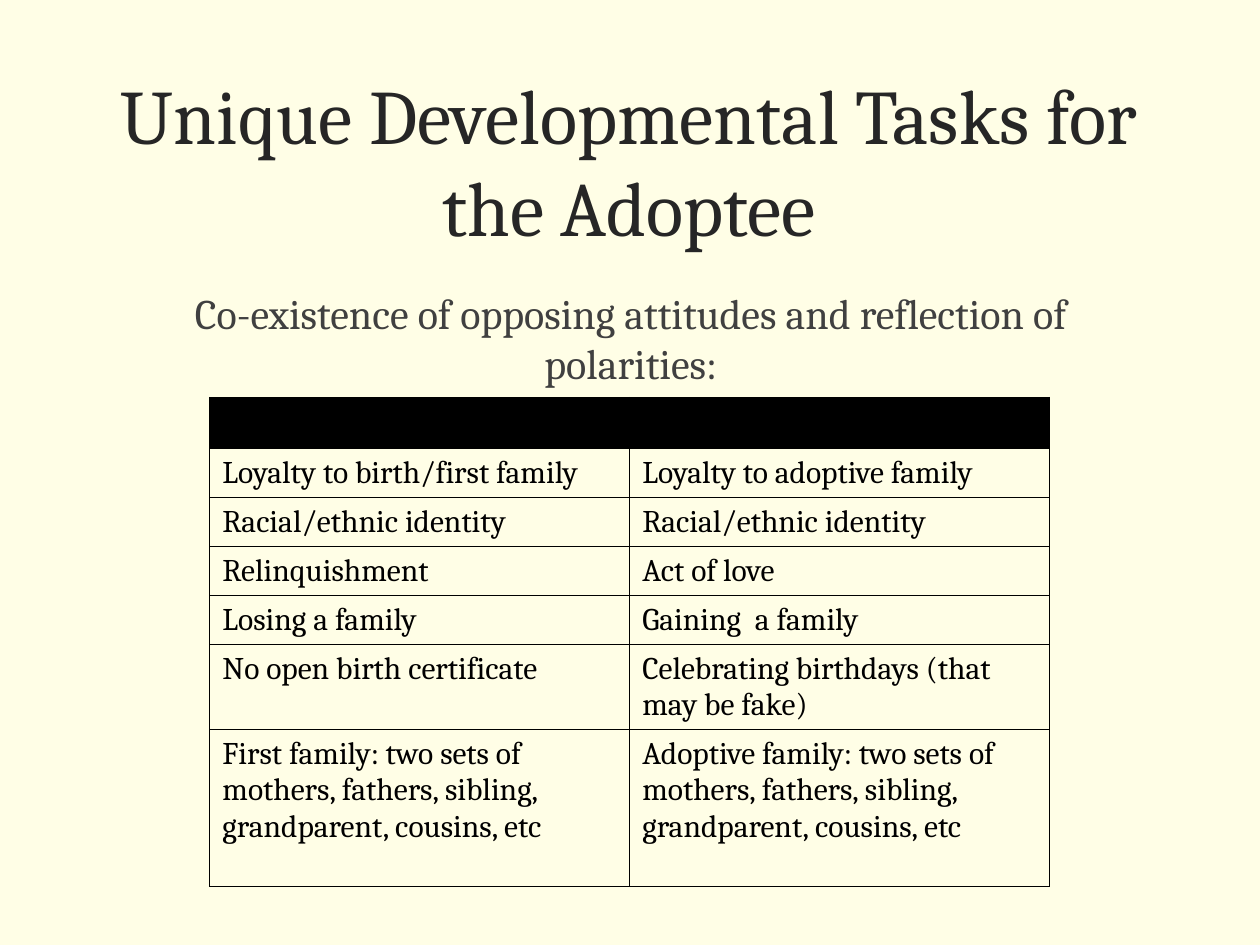
from dataclasses import dataclass

from lxml.etree import SubElement
from pptx import Presentation
from pptx.dml.color import RGBColor
from pptx.enum.text import MSO_ANCHOR, MSO_AUTO_SIZE, PP_ALIGN
from pptx.oxml.ns import qn
from pptx.util import Cm, Pt


@dataclass(frozen=True)
class Theme:
    """Colours, font and sizes of the deck."""
    font: str = "Cambria"
    background: str = "FFFEE6"
    title_color: str = "262626"
    body_color: str = "404040"
    table_color: str = "000000"
    title_size: int = 44
    body_size: int = 24
    table_size: int = 18
    outer_line: float = 0.75
    middle_line: float = 1


@dataclass(frozen=True)
class Box:
    """Place of a region, in centimetres."""
    left: float
    top: float
    width: float
    height: float


THEME = Theme()
TITLE = "Unique Developmental Tasks for the Adoptee"
LEAD = "Co-existence of opposing attitudes and reflection of polarities:"
POLARITIES = [
    ("", ""),
    ("Loyalty to birth/first family", "Loyalty to adoptive family"),
    ("Racial/ethnic identity", "Racial/ethnic identity"),
    ("Relinquishment", "Act of love"),
    ("Losing a family", "Gaining  a family"),
    ("No open birth certificate", "Celebrating birthdays (that may be fake)"),
    ("First family: two sets of mothers, fathers, sibling, grandparent, cousins, etc",
     "Adoptive family: two sets of mothers, fathers, sibling, grandparent, cousins, etc"),
]
ROW_HEIGHTS = [0.98] * 5 + [1.71, 3.15]


def add_span(para, text, size, color):
    """Add one styled run to a paragraph."""
    span = para.add_run()
    span.text = text
    span.font.name = THEME.font
    span.font.size = Pt(size)
    span.font.color.rgb = RGBColor.from_string(color)


def fill_placeholder(holder, box, text, size, color, anchor):
    """Place a placeholder and give it one centred, unbulleted paragraph."""
    holder.left, holder.top = Cm(box.left), Cm(box.top)
    holder.width, holder.height = Cm(box.width), Cm(box.height)
    frame = holder.text_frame
    frame.word_wrap = True
    frame.auto_size = MSO_AUTO_SIZE.NONE
    frame.vertical_anchor = anchor
    para = frame.paragraphs[0]
    para.alignment = PP_ALIGN.CENTER
    para.space_before = Pt(0)
    properties = para._p.get_or_add_pPr()
    properties.set("marL", "0")
    properties.set("indent", "0")
    SubElement(properties, qn("a:buNone"))
    add_span(para, text, size, color)


def set_borders(cell, widths):
    """Draw the left, right, top and bottom borders of a cell."""
    properties = cell._tc.get_or_add_tcPr()
    for side, width in zip("LRTB", widths):
        line = SubElement(properties, qn(f"a:ln{side}"), w=str(Pt(width)))
        fill = SubElement(line, qn("a:solidFill"))
        SubElement(fill, qn("a:srgbClr"), val=THEME.table_color)


def add_polarity_table(page, box):
    """Add the two-column table with its solid header row."""
    table = page.shapes.add_table(
        len(POLARITIES), 2, Cm(box.left), Cm(box.top), Cm(box.width), Cm(box.height)
    ).table
    table.horz_banding = False
    table.first_row = False
    for column in table.columns:
        column.width = Cm(box.width / 2)
    outer, middle = THEME.outer_line, THEME.middle_line
    sides = [(outer, middle), (middle, outer)]
    for row_index, texts in enumerate(POLARITIES):
        table.rows[row_index].height = Cm(ROW_HEIGHTS[row_index])
        for column_index, text in enumerate(texts):
            cell = table.cell(row_index, column_index)
            set_borders(cell, (*sides[column_index], outer, outer))
            if text:
                cell.fill.background()
                add_span(cell.text_frame.paragraphs[0], text,
                         THEME.table_size, THEME.table_color)
            else:
                cell.fill.solid()
                cell.fill.fore_color.rgb = RGBColor.from_string(THEME.table_color)


def build_page(deck):
    """Build the slide with title, lead sentence and table."""
    page = deck.slides.add_slide(deck.slide_layouts[1])
    page.background.fill.solid()
    page.background.fill.fore_color.rgb = RGBColor.from_string(THEME.background)
    fill_placeholder(page.shapes.title, Box(1.52, 1.22, 22.33, 4.01), TITLE,
                     THEME.title_size, THEME.title_color, MSO_ANCHOR.MIDDLE)
    fill_placeholder(page.placeholders[1], Box(2.34, 5.66, 20.75, 10.97), LEAD,
                     THEME.body_size, THEME.body_color, MSO_ANCHOR.TOP)
    add_polarity_table(page, Box(4.23, 8.01, 16.93, sum(ROW_HEIGHTS)))


def main():
    """Create and save the deck."""
    deck = Presentation()
    deck.slide_width, deck.slide_height = Cm(25.4), Cm(19.05)
    build_page(deck)
    deck.save("out.pptx")


if __name__ == "__main__":
    main()
